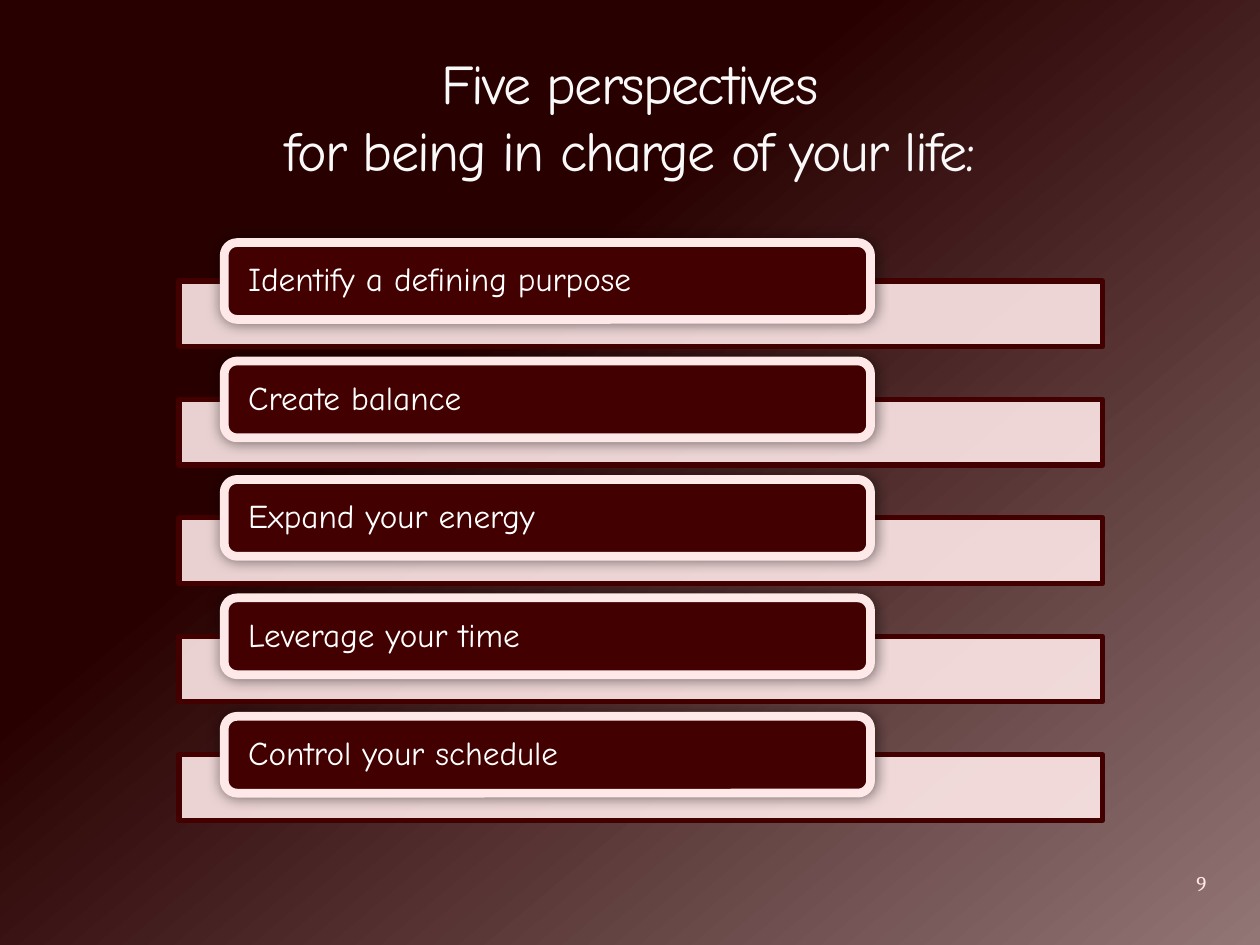
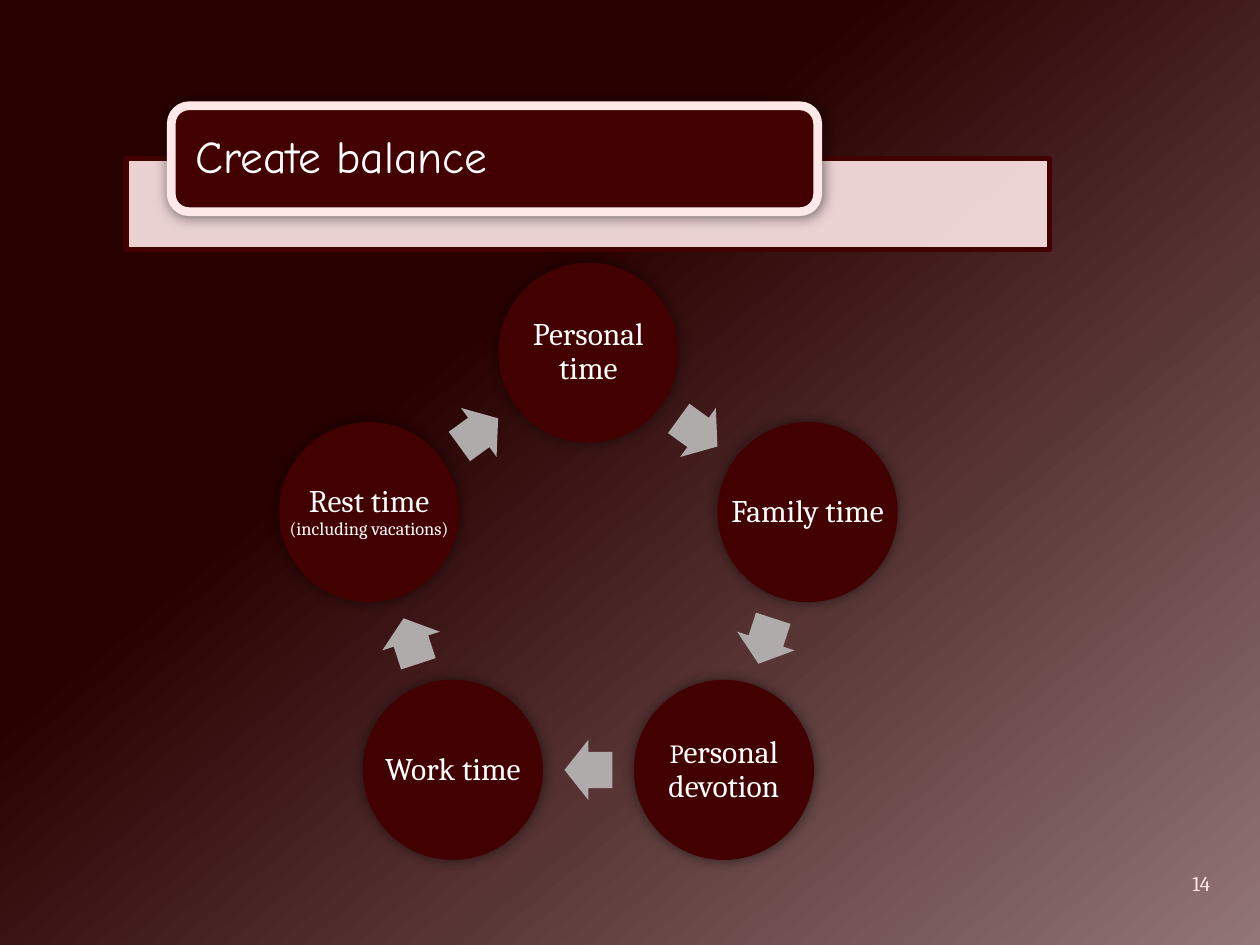
"""Build two slides on five perspectives for being in charge of your life."""
import math
from lxml import etree
from pptx import Presentation
from pptx import util as u
from pptx.dml.color import RGBColor
from pptx.enum import shapes, text
from pptx.oxml.ns import qn

HUE = {"dark": "280000", "mauve": "927575", "wine": "430000", "rose": "FFE8E8",
       "gray": "B0ABAB", "white": "FFFFFF", "pale": "F9F9F9", "black": "000000"}
HAND, SERIF = "Comic Neue", "Cambria"
KIND, ALIGN, ANCHOR = shapes.MSO_SHAPE, text.PP_ALIGN, text.MSO_ANCHOR


def draw(page, kind, box, fill, edge=None, width=0, glow=False):
    shape = page.shapes.add_shape(kind, *map(u.Inches, box))
    shape.shadow.inherit = False
    shape.fill.solid()
    shape.fill.fore_color.rgb = RGBColor.from_string(HUE[fill])
    if edge:
        shape.line.color.rgb = RGBColor.from_string(HUE[edge])
        shape.line.width = u.Pt(width)
    else:
        shape.line.fill.background()
    if glow:
        effects = shape._element.spPr.find(qn("a:effectLst"))
        shade = etree.SubElement(effects, qn("a:outerShdw"), blurRad=str(u.Pt(7.5)),
                                 dist="0", dir="0", rotWithShape="0")
        color = etree.SubElement(shade, qn("a:srgbClr"), val=HUE["black"])
        etree.SubElement(color, qn("a:alpha"), val="50000")
    return shape


def write(page, box, parts, face, hue="white", align=ALIGN.CENTER, pad=(0, 0),
          anchor=ANCHOR.MIDDLE, space=0.9, split=False):
    frame = page.shapes.add_textbox(*map(u.Inches, box)).text_frame
    frame.word_wrap = True
    frame.vertical_anchor = anchor
    frame.margin_left = frame.margin_right = u.Inches(pad[0])
    frame.margin_top = frame.margin_bottom = u.Inches(pad[1])
    para = frame.paragraphs[0]
    para.alignment = align
    para.line_spacing = space
    for words, size in parts:
        if split and para.runs:
            para.add_line_break()
        run = para.add_run()
        run.text = words
        run.font.size = u.Pt(size)
        run.font.name = face
        run.font.color.rgb = RGBColor.from_string(HUE[hue])
    return para


deck = Presentation()
deck.slide_width, deck.slide_height = u.Inches(10), u.Inches(7.5)
pages = []
for number in ("9", "14"):
    page = deck.slides.add_slide(deck.slide_layouts[6])
    back = page.background.fill
    back.gradient()
    back.gradient_angle = 130
    for stop, hue, place in zip(back.gradient_stops, ("mauve", "dark"), (0, 0.64)):
        stop.color.rgb = RGBColor.from_string(HUE[hue])
        stop.position = place
    write(page, (9.2, 6.76, 0.67, 0.5), [(number, 12)], SERIF, "rose", space=1.0)
    pages.append(page)
goals, cycle = pages

title = write(goals, (0.5, 0.17, 9, 1.33),
              [("Five perspectives", 32), ("for being in charge of your life:", 32)],
              HAND, "pale", pad=(0.1, 0.05), anchor=ANCHOR.BOTTOM, space=1.0, split=True)
for run in title.runs:
    run.font._element.set("spc", "-100")

steps = ["Identify a defining purpose", "Create balance", "Expand your energy",
         "Leverage your time", "Control your schedule"]
bands = [(goals, step, 1.42, 2.23 + 0.94 * i, 0.52, 0.61, 19)
         for i, step in enumerate(steps)]
bands.append((cycle, steps[1], 1, 1.26, 0.72, 0.84, 26))
for page, label, left, top, deep, tall, size in bands:
    bar = draw(page, KIND.RECTANGLE, (left, top, 7.33, deep), "rose", "wine", 3)
    tint = bar._element.spPr.find(qn("a:solidFill"))[0]
    etree.SubElement(tint, qn("a:alpha"), val="90000")
    box = (left + 0.36, top - tall / 2, 5.13, tall)
    draw(page, KIND.ROUNDED_RECTANGLE, box, "wine", "rose", 5, glow=True)
    write(page, box, [(label, size)], HAND, align=ALIGN.LEFT, pad=(0.19, 0))

times = [[("Personal time", 18)], [("Family time", 18)],
         [("P", 15), ("ersonal devotion", 18)], [("Work time", 18)],
         [("Rest time ", 18), ("(including vacations)", 10.5)]]
midx, midy, reach, disc = 4.67, 4.63, 1.83, 1.43
wide, high = 0.38, 0.48
turn = 360 / len(times)
inner = reach * math.cos(math.radians(turn / 2))
for i, parts in enumerate(times):
    angle = math.radians(turn * i)
    box = (midx + reach * math.sin(angle) - disc / 2,
           midy - reach * math.cos(angle) - disc / 2, disc, disc)
    draw(cycle, KIND.OVAL, box, "wine", glow=True)
    write(cycle, box, parts, SERIF, pad=(0.03, 0.03))
    tilt = turn * (i + 0.5)
    angle = math.radians(tilt)
    arrow = draw(cycle, KIND.RIGHT_ARROW,
                 (midx + inner * math.sin(angle) - wide / 2,
                  midy - inner * math.cos(angle) - high / 2, wide, high), "gray")
    arrow.adjustments[0], arrow.adjustments[1] = 0.6, 0.5
    arrow.rotation = tilt

deck.save("out.pptx")
